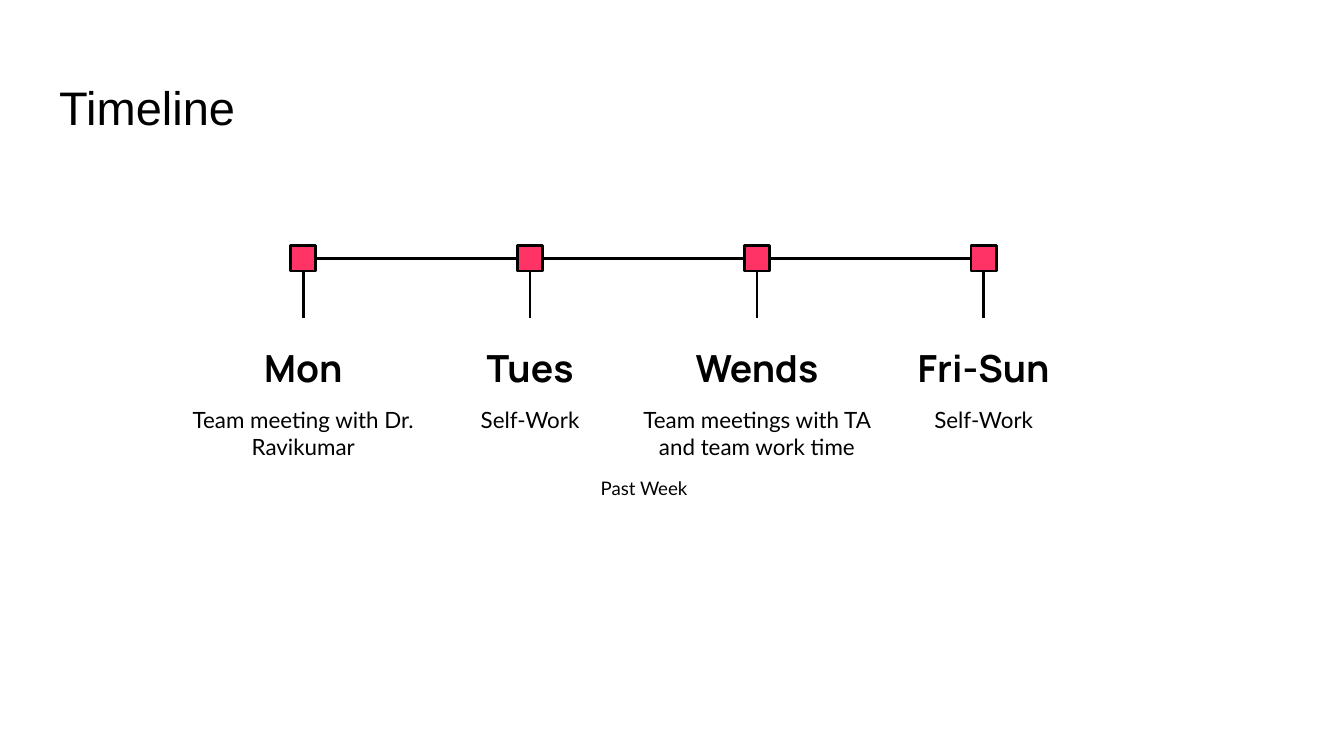
from dataclasses import dataclass

from pptx import Presentation
from pptx.dml.color import RGBColor
from pptx.enum.shapes import MSO_CONNECTOR, MSO_SHAPE
from pptx.enum.text import MSO_ANCHOR, MSO_AUTO_SIZE, PP_ALIGN
from pptx.oxml.ns import qn
from pptx.shapes.autoshape import Shape
from pptx.slide import Slide
from pptx.util import Pt
from lxml import etree

RECT = MSO_SHAPE.RECTANGLE
LINE = MSO_CONNECTOR.STRAIGHT
TOP, BOTTOM = MSO_ANCHOR.TOP, MSO_ANCHOR.BOTTOM
LEFT, CENTER = PP_ALIGN.LEFT, PP_ALIGN.CENTER
FIXED = MSO_AUTO_SIZE.NONE
SIDE_TOP, SIDE_LEFT, SIDE_BOTTOM, SIDE_RIGHT = range(4)

COLORS = {"ink": "000000", "mark": "FF3366", "page": "FFFFFF"}
FIRST_X, STEP = 162.5, 121.5
MARK_TOP, MARK = 131.75, 13.5
DAY_TOP, DAY_H = 170.5, 45.5
NOTE_TOP, NOTE_H = 210.25, 25
TEXT_W = 142.5
STROKE = 1.5
INSET = 7.2


@dataclass
class Stop:
    day: str
    note: str
    width: float = TEXT_W


STOPS = [
    Stop("Mon", "Team meeting with Dr. Ravikumar"),
    Stop("Tues", "Self-Work"),
    Stop("Wends", "Team meetings with TA and team work time"),
    Stop("Fri-Sun", "Self-Work", width=204),
]


def color(name: str) -> RGBColor:
    return RGBColor.from_string(COLORS[name])


def write(shape: Shape, text: str, *, size: float, font: str,
          bold: bool = False, align: PP_ALIGN = CENTER,
          anchor: MSO_ANCHOR = TOP) -> None:
    frame = shape.text_frame
    frame.word_wrap = True
    frame.auto_size = FIXED
    frame.vertical_anchor = anchor
    frame.margin_left = frame.margin_right = Pt(INSET)
    frame.margin_top = frame.margin_bottom = Pt(INSET)
    para = frame.paragraphs[0]
    para.alignment = align
    run = para.add_run()
    run.text = text
    run.font.size = Pt(size)
    run.font.name = font
    run.font.bold = bold
    run.font.color.rgb = color("ink")


def add_box(slide: Slide, mid: float, top: float, width: float,
            height: float) -> Shape:
    """Add a text box centred on mid."""
    return slide.shapes.add_textbox(
        Pt(mid - width / 2), Pt(top), Pt(width), Pt(height))


def add_mark(slide: Slide, mid: float) -> Shape:
    mark = slide.shapes.add_shape(
        RECT, Pt(mid - MARK / 2), Pt(MARK_TOP), Pt(MARK), Pt(MARK))
    mark.shadow.inherit = False
    mark.fill.solid()
    mark.fill.fore_color.rgb = color("mark")
    mark.line.color.rgb = color("ink")
    mark.line.width = Pt(STROKE)
    return mark


def join(slide: Slide, start: Shape, side: int, end: Shape,
         end_side: int) -> None:
    line = slide.shapes.add_connector(LINE, 0, 0, 0, 0)
    line.begin_connect(start, side)
    line.end_connect(end, end_side)
    line.line.color.rgb = color("ink")
    line.line.width = Pt(STROKE)
    etree.SubElement(line._element.spPr, qn("a:effectLst"))


def add_stop(slide: Slide, stop: Stop, mid: float) -> Shape:
    """Draw a mark, its stem and its texts; return the mark."""
    mark = add_mark(slide, mid)
    day = add_box(slide, mid, DAY_TOP, stop.width, DAY_H)
    write(day, stop.day, size=20, font="Manrope", bold=True, anchor=BOTTOM)
    note = add_box(slide, mid, NOTE_TOP, TEXT_W, NOTE_H)
    write(note, stop.note, size=12, font="Lato")
    join(slide, mark, SIDE_BOTTOM, day, SIDE_TOP)
    return mark


def main() -> None:
    deck = Presentation()
    deck.slide_width, deck.slide_height = Pt(720), Pt(405)
    slide = deck.slides.add_slide(deck.slide_layouts[5])
    slide.background.fill.solid()
    slide.background.fill.fore_color.rgb = color("page")

    title = slide.shapes.title
    title.left, title.top = Pt(24.5), Pt(35)
    title.width, title.height = Pt(671), Pt(45)
    write(title, "Timeline", size=25.2, font="Arial", align=LEFT)

    marks = [add_stop(slide, stop, FIRST_X + i * STEP)
             for i, stop in enumerate(STOPS)]
    for start, end in zip(marks, marks[1:]):
        join(slide, start, SIDE_RIGHT, end, SIDE_LEFT)

    week = add_box(slide, 345, 248.5, TEXT_W, NOTE_H)
    write(week, "Past Week", size=10, font="Lato")
    deck.save("out.pptx")


if __name__ == "__main__":
    main()
